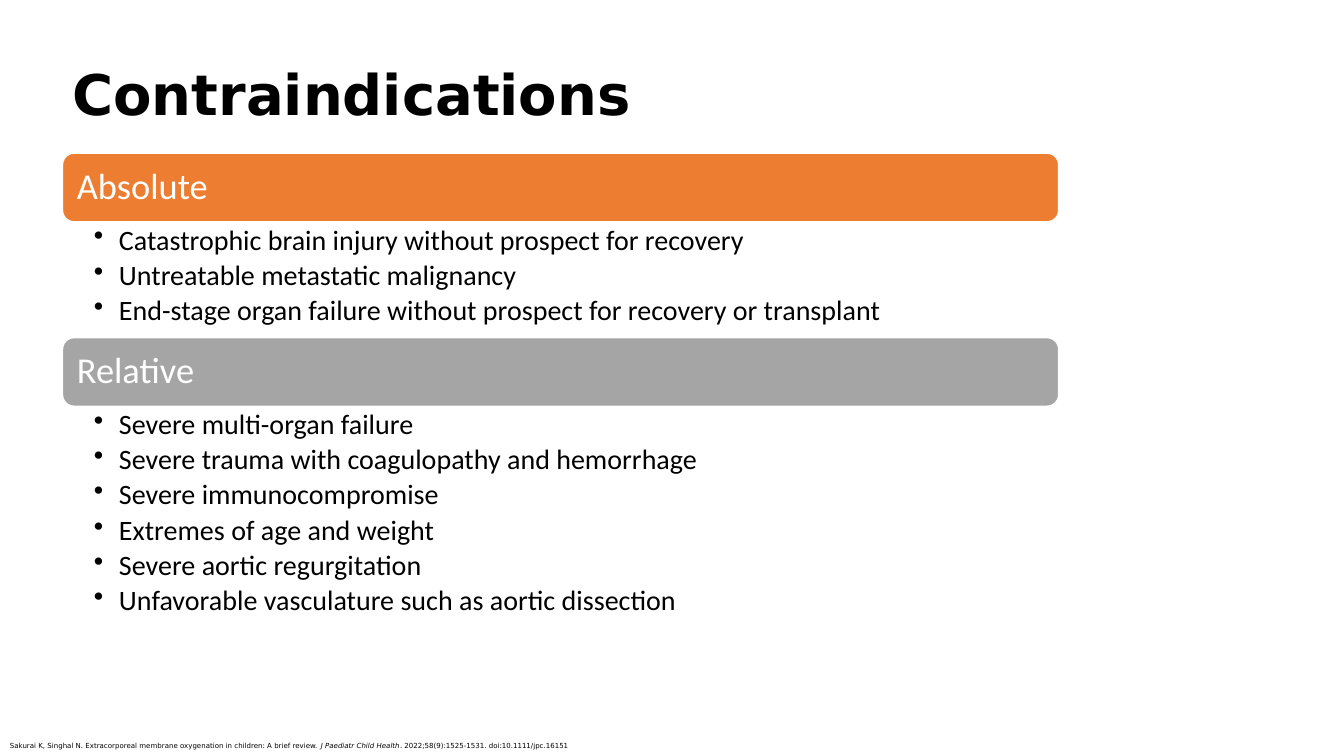
from lxml.etree import SubElement
from pptx import Presentation
from pptx.dml.color import RGBColor
from pptx.enum.shapes import MSO_SHAPE as Shape
from pptx.enum.text import MSO_ANCHOR as Anchor, PP_ALIGN as Align
from pptx.oxml.ns import qn
from pptx.util import Inches, Pt

SANS = "DejaVu Sans"
BODY = "Calibri"
HEADER_HEIGHT = 0.68
GROUPS = [
    ("Absolute", "ED7D31", 1.15, [
        "Catastrophic brain injury without prospect for recovery",
        "Untreatable metastatic malignancy",
        "End-stage organ failure without prospect for recovery or transplant",
    ]),
    ("Relative", "A5A5A5", 2.3, [
        "Severe multi-organ failure",
        "Severe trauma with coagulopathy and hemorrhage",
        "Severe immunocompromise",
        "Extremes of age and weight",
        "Severe aortic regurgitation",
        "Unfavorable vasculature such as aortic dissection",
    ]),
]
CITATION = [
    ("Sakurai K, Singhal N. Extracorporeal membrane oxygenation in children: A brief review.\u00a0", False),
    ("J Paediatr Child Health", True),
    (". 2022;58(9):1525-1531. doi:10.1111/jpc.16151", False),
]


def color(code):
    return RGBColor.from_string(code)


def apply(target, **values):
    for name, value in values.items():
        setattr(target, name, value)


def add_run(paragraph, text, size, name, code="000000", **style):
    run = paragraph.add_run()
    run.text = text
    apply(run.font, size=Pt(size), name=name, **style)
    run.font.color.rgb = color(code)


def add_text_frame(slide, box, **values):
    frame = slide.shapes.add_textbox(*map(Inches, box)).text_frame
    apply(frame, word_wrap=True, **values)
    return frame


def add_title(slide, box):
    frame = add_text_frame(slide, box, vertical_anchor=Anchor.MIDDLE)
    heading = frame.paragraphs[0]
    heading.line_spacing = 0.9
    add_run(heading, "Contraindications", 40, SANS, bold=True)


def add_header(slide, box, label, fill):
    header = slide.shapes.add_shape(Shape.ROUNDED_RECTANGLE, *map(Inches, box))
    header.shadow.inherit = False
    header.fill.solid()
    header.fill.fore_color.rgb = color(fill)
    header.line.color.rgb = color("FFFFFF")
    header.line.width = Pt(1)
    apply(header.text_frame, word_wrap=True, vertical_anchor=Anchor.MIDDLE,
          margin_left=Inches(0.11), margin_right=Inches(0.11))
    heading = header.text_frame.paragraphs[0]
    apply(heading, alignment=Align.LEFT, line_spacing=0.9)
    add_run(heading, label, 26, BODY, "FFFFFF")


def add_bullets(slide, box, items):
    frame = add_text_frame(slide, box, margin_left=Inches(0.31), margin_right=Inches(0.2),
                           margin_top=Inches(0.04), margin_bottom=Inches(0.04))
    for index, item in enumerate(items):
        bullet = frame.add_paragraph() if index else frame.paragraphs[0]
        properties = bullet._p.get_or_add_pPr()
        properties.set("marL", str(Inches(0.25)))
        properties.set("indent", str(Inches(-0.25)))
        SubElement(properties, qn("a:buChar"), char="•")
        apply(bullet, level=1, line_spacing=0.9, space_after=Pt(3.6))
        add_run(bullet, item, 20, BODY)


def add_groups(slide, left, top, width):
    for label, fill, list_height, items in GROUPS:
        add_header(slide, (left, top, width, HEADER_HEIGHT), label, fill)
        add_bullets(slide, (left, top + HEADER_HEIGHT, width, list_height), items)
        top += HEADER_HEIGHT + list_height


def add_citation(slide, box):
    citation = add_text_frame(slide, box).paragraphs[0]
    for text, italic in CITATION:
        add_run(citation, text, 5, SANS, italic=italic)


def main():
    deck = Presentation()
    deck.slide_width, deck.slide_height = Inches(13.33), Inches(7.5)
    slide = deck.slides.add_slide(deck.slide_layouts[6])
    add_title(slide, (0.62, 0.61, 7.09, 0.71))
    add_groups(slide, 0.62, 1.52, 9.88)
    add_citation(slide, (0, 7.31, 6.66, 0.19))
    deck.save("out.pptx")


if __name__ == "__main__":
    main()
